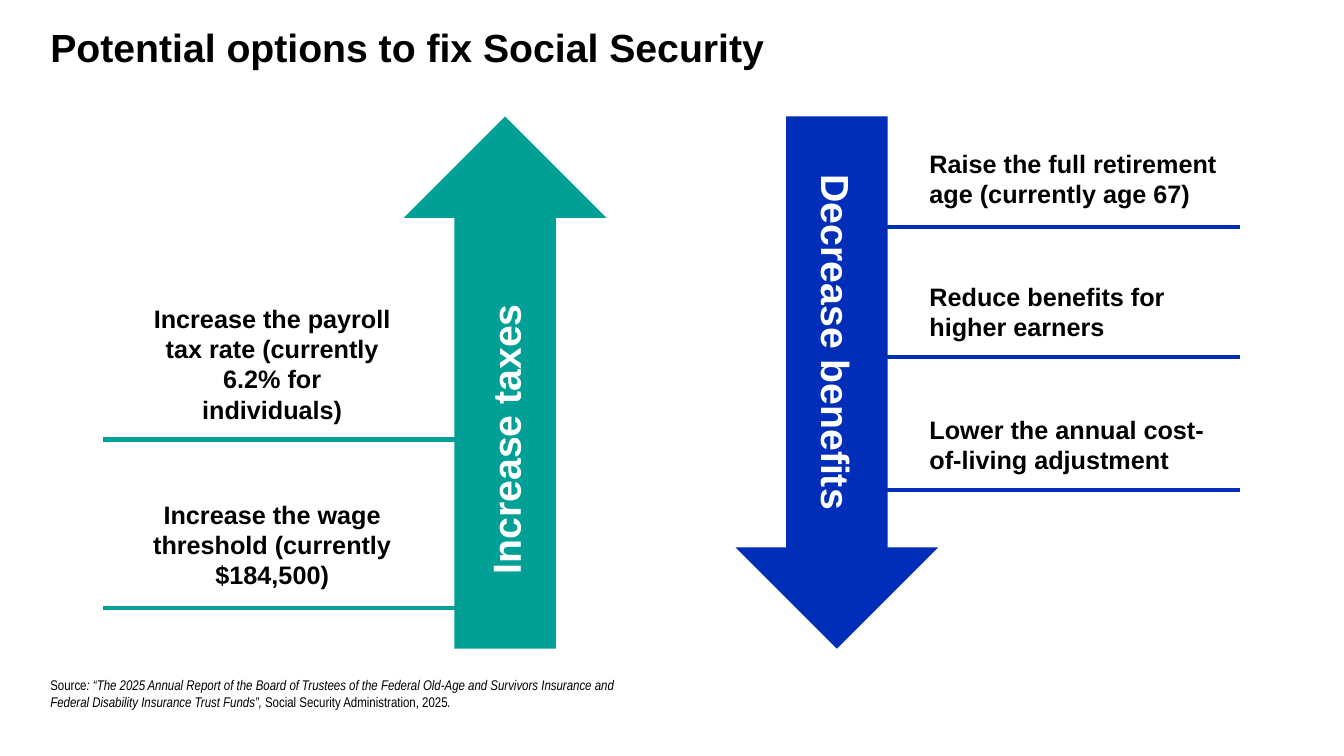
from lxml.etree import SubElement
from pptx import Presentation
from pptx.dml.color import RGBColor
from pptx.enum.shapes import MSO_CONNECTOR, MSO_SHAPE
from pptx.enum.text import MSO_ANCHOR, PP_ALIGN
from pptx.oxml.ns import qn
from pptx.util import Inches, Pt

BLACK, WHITE, TEAL, BLUE = "000000", "FFFFFF", "00A096", "002EB8"
TITLE = "Potential options to fix Social Security"
ARROW_SIZE = (5.28, 2.01)
RULE_LENGTH = 3.5

DIRECTIONS = [
    {
        "label": "Increase taxes", "color": TEAL, "rotation": 270,
        "arrow": (2.37, 2.79), "label_at": (3.25, 3.75, 3.52, 0.57),
        "align": PP_ALIGN.CENTER, "text_left": 1.4, "rule_left": 1.02,
        "options": [
            ("Increase the payroll tax rate (currently 6.2% for individuals)", 2.96, 2.6, 1.31, 4.36),
            ("Increase the wage threshold (currently $184,500)", 4.9, 2.6, 1.01, 6.03),
        ],
    },
    {
        "label": "Decrease benefits", "color": BLUE, "rotation": 90,
        "arrow": (5.66, 2.79), "label_at": (6.34, 3.31, 3.92, 0.57),
        "align": PP_ALIGN.LEFT, "text_left": 9.12, "rule_left": 8.8,
        "options": [
            ("Raise the full retirement age (currently age 67)", 1.42, 3.12, 0.71, 2.25),
            ("Reduce benefits for higher earners", 2.74, 2.79, 0.71, 3.54),
            ("Lower the annual cost-of-living adjustment", 4.06, 3.09, 0.71, 4.86),
        ],
    },
]

SOURCE = [
    [("Source", False),
     (": “The 2025 Annual Report of the Board of Trustees of the Federal Old-Age and Survivors Insurance and", True)],
    [("Federal Disability Insurance Trust Funds”, ", True),
     ("Social Security Administration, 2025", False), (".", True)],
]


def paint(color_format, color):
    color_format.rgb = RGBColor.from_string(color)


def add_text(page, place, lines, size, color=BLACK, font="Arial", bold=True,
             align=PP_ALIGN.LEFT, anchor=MSO_ANCHOR.TOP, inset=True):
    box = page.shapes.add_textbox(*map(Inches, place))
    frame = box.text_frame
    frame.word_wrap = True
    frame.vertical_anchor = anchor
    if not inset:
        frame.margin_left = frame.margin_right = frame.margin_top = frame.margin_bottom = 0
    for index, line in enumerate(lines):
        para = frame.add_paragraph() if index else frame.paragraphs[0]
        para.alignment = align
        for text, italic in line:
            span = para.add_run()
            span.text = text
            span.font.name = font
            span.font.size = Pt(size)
            span.font.bold = bold
            span.font.italic = italic
            paint(span.font.color, color)
    return box


def add_arrow(page, place, color, rotation):
    arrow = page.shapes.add_shape(MSO_SHAPE.RIGHT_ARROW, *map(Inches, place + ARROW_SIZE))
    arrow.rotation = rotation
    arrow.shadow.inherit = False
    arrow.fill.solid()
    paint(arrow.fill.fore_color, color)
    arrow.line.fill.background()


def add_rule(page, left, top, color):
    rule = page.shapes.add_connector(
        MSO_CONNECTOR.STRAIGHT, *map(Inches, (left, top, left + RULE_LENGTH, top)))
    rule.line.width = Pt(3)
    paint(rule.line.color, color)
    SubElement(rule._element.spPr, qn("a:effectLst"))


def main():
    deck = Presentation()
    deck.slide_width, deck.slide_height = Inches(13.33), Inches(7.5)
    page = deck.slides.add_slide(deck.slide_layouts[6])
    add_text(page, (0.5, 0.23, 10.28, 0.47), [[(TITLE, False)]], 28, inset=False)
    for side in DIRECTIONS:
        add_arrow(page, side["arrow"], side["color"], side["rotation"])
        label = add_text(page, side["label_at"], [[(side["label"], False)]], 28,
                         WHITE, anchor=MSO_ANCHOR.MIDDLE)
        label.rotation = side["rotation"]
        for text, top, width, height, rule_top in side["options"]:
            add_text(page, (side["text_left"], top, width, height), [[(text, False)]], 18,
                     align=side["align"])
            add_rule(page, side["rule_left"], rule_top, side["color"])
    add_text(page, (0.5, 6.46, 12.33, 0.59), SOURCE, 10, font="Arial Narrow", bold=False,
             anchor=MSO_ANCHOR.BOTTOM, inset=False)
    deck.save("out.pptx")


if __name__ == "__main__":
    main()
